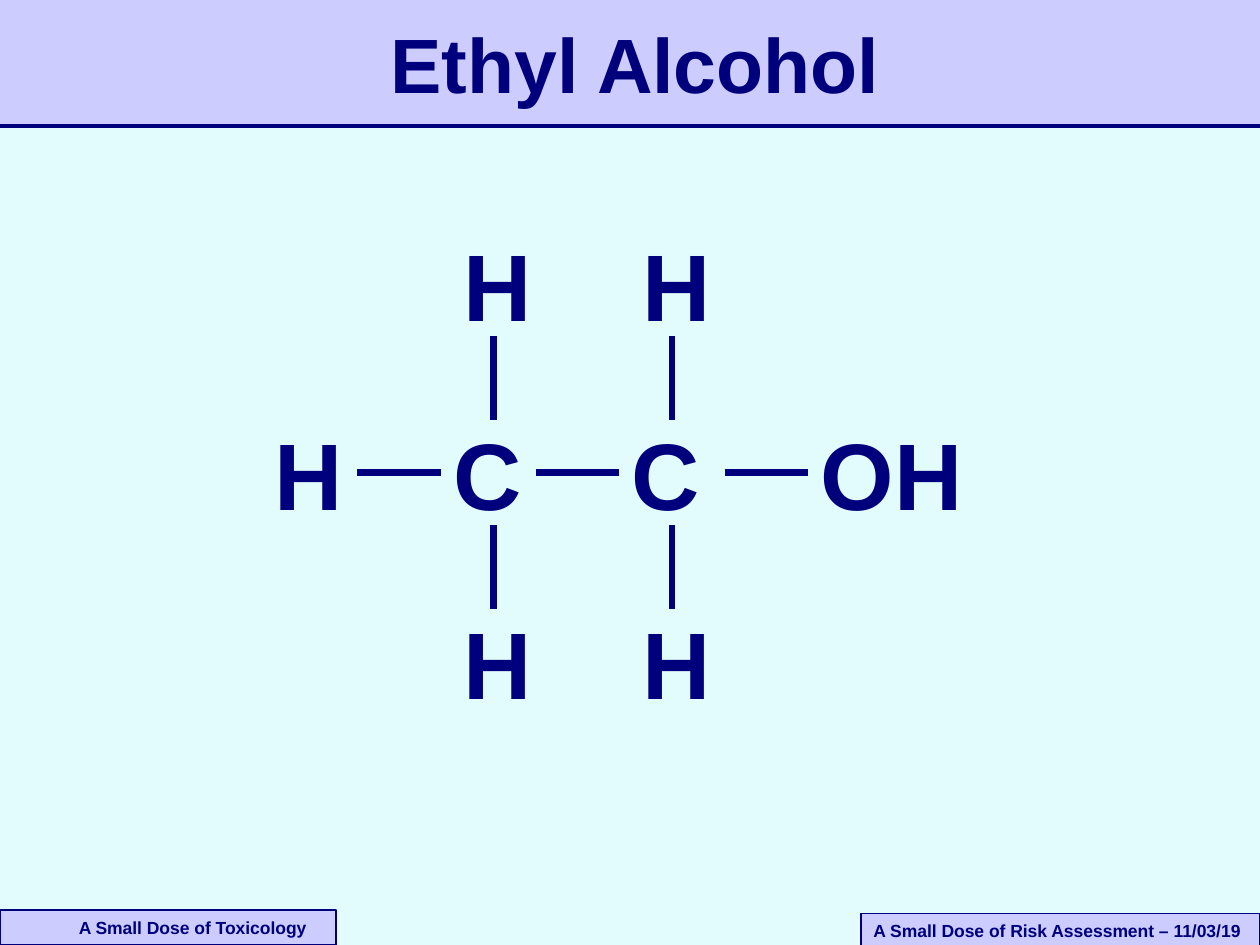
import pptx
import pptx.dml.color
import pptx.enum.shapes
import pptx.enum.text
import pptx.oxml
import pptx.util

Pt = pptx.util.Pt
RGB = pptx.dml.color.RGBColor
NAVY = RGB(0x00, 0x00, 0x7D)
LILAC = RGB(0xCC, 0xCC, 0xFF)
AQUA = RGB(0xE2, 0xFC, 0xFE)
LEFT = pptx.enum.text.PP_ALIGN.LEFT
CENTER = pptx.enum.text.PP_ALIGN.CENTER
MIDDLE = pptx.enum.text.MSO_ANCHOR.MIDDLE


def write(shape, text, size, align=LEFT):
    """Put bold navy text in a shape."""
    frame = shape.text_frame
    frame.text = text
    frame.word_wrap = True
    para = frame.paragraphs[0]
    para.alignment = align
    font = para.runs[0].font
    font.name, font.size, font.bold = "Arial", Pt(size), True
    font.color.rgb = NAVY


def add_rect(slide, box):
    """Add a lilac rectangle without an outline."""
    kind = pptx.enum.shapes.MSO_SHAPE.RECTANGLE
    rect = slide.shapes.add_shape(kind, *map(Pt, box))
    rect.shadow.inherit = False
    rect.fill.solid()
    rect.fill.fore_color.rgb = LILAC
    rect.line.fill.background()
    return rect


def add_line(slide, start, end, width):
    """Add a straight navy line."""
    kind = pptx.enum.shapes.MSO_CONNECTOR.STRAIGHT
    line = slide.shapes.add_connector(kind, *map(Pt, start + end))
    line.line.color.rgb = NAVY
    line.line.width = Pt(width)
    pptx.oxml.ns.qn("a:effectLst")
    line._element.spPr.add_effectLst() if hasattr(
        line._element.spPr, "add_effectLst"
    ) else line._element.spPr.get_or_add_effectLst()
    return line


def add_head(slide, box, text):
    """Draw the title band and place the title on it."""
    left, top, width, height = box
    add_rect(slide, box)
    base = top + height
    add_line(slide, (left, base), (left + width, base), 2)
    title = slide.shapes.title
    slide.shapes._spTree.append(title._element)
    title.left, title.top = Pt(left + 108), Pt(top + 6)
    title.width, title.height = Pt(510), Pt(height - 12)
    write(title, text, 44, CENTER)
    title.text_frame.vertical_anchor = MIDDLE


def add_foot(slide, box, text, inset):
    """Draw an outlined footer label."""
    label = add_rect(slide, box)
    label.line.color.rgb = NAVY
    label.line.width = Pt(0.75)
    write(label, text, 10)
    label.text_frame.margin_left = Pt(inset)
    label.text_frame.margin_right = 0


def add_atom(slide, left, top, text, width):
    """Add one atom symbol."""
    atom = slide.shapes.add_textbox(Pt(left), Pt(top), Pt(width), Pt(72))
    write(atom, text, 54)
    return atom


def add_ethyl(slide, box):
    """Draw the structure of ethyl alcohol from the box's corner."""
    left, top = box[:2]
    step, rise, bond = 102, 108, 48
    row = top + rise
    mid = row + 36
    first = add_atom(slide, left, row, "H", 54)
    for i, (text, width) in enumerate((("C", 57.6), ("C", 57.6), ("OH", 96))):
        end = left + step * (i + 1) + (6 if text == "OH" else 0)
        atom = add_atom(slide, end, row, text, width)
        line = add_line(slide, (end - bond, mid), (end, mid), 3.5)
        line.end_connect(atom, 1)
        if i == 0:
            line.begin_connect(first, 3)
        if text == "C":
            for side in (0, 1):
                add_atom(slide, end + 6, top + 2 * rise * side, "H", 54)
                high = top + 66 + rise * side
                add_line(slide, (end + 30, high + bond), (end + 30, high), 3.5)


def main():
    """Build and save the slide."""
    deck = pptx.Presentation()
    deck.slide_width, deck.slide_height = Pt(720), Pt(540)
    slide = deck.slides.add_slide(deck.slide_layouts[5])
    slide.background.fill.solid()
    slide.background.fill.fore_color.rgb = AQUA
    add_head(slide, (0, 0, 720, 72), "Ethyl Alcohol")
    add_foot(slide, (492, 522, 228, 19.5),
             "A Small Dose of Risk Assessment – 11/03/19", 7.2)
    add_foot(slide, (0, 520, 192, 20), "A Small Dose of Toxicology", 45)
    add_ethyl(slide, (150, 126, 408, 288))
    deck.save("out.pptx")


if __name__ == "__main__":
    main()
